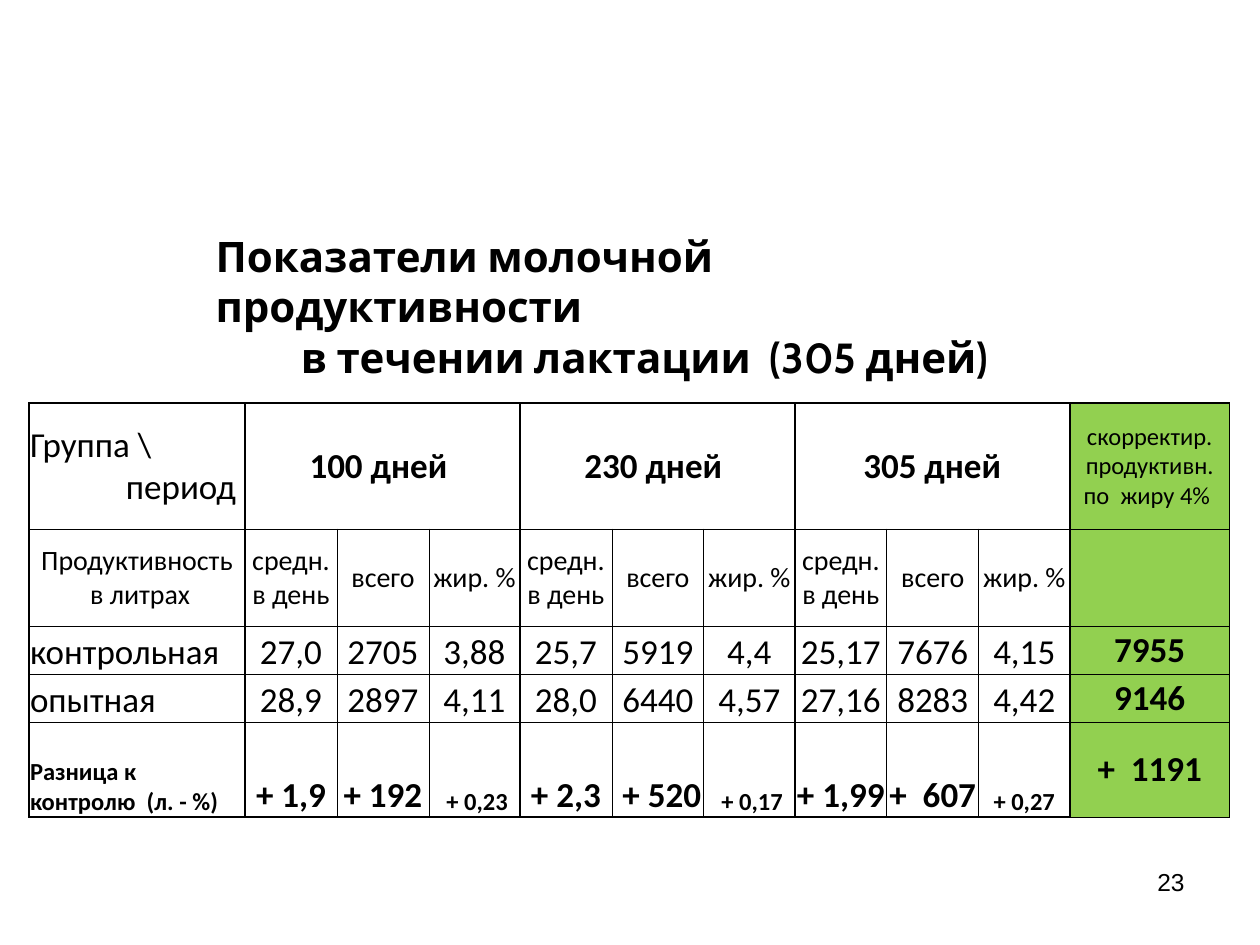
import pptx
import pptx.util
import pptx.dml.color
import pptx.enum.text
import pptx.oxml
from pptx.oxml.ns import qn

# Content
TITLE = ["Показатели молочной продуктивности", " в течении лактации  (305 дней) "]
PAGE = "23"
SPANS = ["100 дней ", "230 дней ", "305 дней"]
SUBS = ["средн. в день", "всего", "жир. %"]
ROWS = [
    ["Группа \\\nпериод ", SPANS[0], "", "", SPANS[1], "", "", SPANS[2], "", "",
     "скорректир. продуктивн. по  жиру 4% "],
    ["Продуктивность\n в литрах", *SUBS * 3, ""],
    ["контрольная", "27,0", "2705", "3,88", "25,7", "5919", "4,4",
     "25,17", "7676", "4,15", "7955"],
    ["опытная", "28,9", "2897", "4,11", "28,0", "6440", "4,57",
     "27,16", "8283", "4,42", "9146"],
    ["Разница к контролю  (л. - %)", "+ 1,9", "+ 192", " + 0,23", "+ 2,3", " + 520",
     " + 0,17", "+ 1,99", "+  607", "+ 0,27", "+  1191"],
]

# Layout in px
WIDTHS = [216] + [92, 92, 91] * 3 + [160]
HEIGHTS = [126, 97, 48, 48, 95]
STARTS = (1, 4, 7)
LAST = len(WIDTHS) - 1
END = len(ROWS) - 1
BLACK, GREEN = "000000", "92D050"

ALIGN = pptx.enum.text.PP_ALIGN
ANCHOR = pptx.enum.text.MSO_ANCHOR


def px(n):
    return pptx.util.Emu(n * 914400 // 126)


def color(code):
    return pptx.dml.color.RGBColor.from_string(code)


def write(frame, text, size=20, font="Calibri", bold=False, align=(ALIGN.CENTER,)):
    """Fill a frame, one paragraph a line; align holds one value a line or one for all."""
    frame.word_wrap = True
    for i, line in enumerate(text.split("\n")):
        para = frame.paragraphs[0] if i == 0 else frame.add_paragraph()
        para.alignment = align[min(i, len(align) - 1)]
        run = para.add_run()
        run.text = line
        run.font.size = pptx.util.Pt(size)
        run.font.name = font
        run.font.bold = bold
        run.font.color.rgb = color(color_code) if (color_code := BLACK) else None


def edges(cell, **sides):
    props = cell._tc.get_or_add_tcPr()
    for n, (side, width) in enumerate(sides.items()):
        line = pptx.oxml.parse_xml(
            f'<a:{side} xmlns:a="http://schemas.openxmlformats.org/drawingml/2006/main" '
            f'w="{pptx.util.Pt(width)}"><a:solidFill><a:srgbClr val="{BLACK}"/>'
            f'</a:solidFill></a:{side}>')
        props.insert(n, line)


def style(row, col):
    """Size, weight and alignment of a cell."""
    bold = row == END or (row == 0 and col in STARTS) or (row in (2, 3) and col == LAST)
    size = 16 if row == 1 else 20
    if (row, col) == (0, LAST) or (row == END and col in (0, 3, 6, 9)):
        size = 14
    align = (ALIGN.CENTER,)
    if col == 0 and row != 1:
        align = (ALIGN.LEFT, ALIGN.RIGHT)
    return dict(size=size, bold=bold, align=align)


deck = pptx.Presentation()
deck.slide_width, deck.slide_height = px(1260), px(945)
slide = deck.slides.add_slide(deck.slide_layouts[5])

# Title
title = slide.shapes.title
title.left, title.top, title.width, title.height = map(px, (203, 224, 883, 115))
title.text_frame.vertical_anchor = ANCHOR.TOP
title.text_frame.auto_size = pptx.enum.text.MSO_AUTO_SIZE.SHAPE_TO_FIT_TEXT
write(title.text_frame, "\n".join(TITLE), size=24, font="Cabin", bold=True,
      align=(ALIGN.LEFT, ALIGN.CENTER))

# Page number
box = slide.shapes.add_textbox(*map(px, (903, 861, 294, 65)))
write(box.text_frame, PAGE, size=14, font="Arial", align=(ALIGN.RIGHT,))

# Table
table = slide.shapes.add_table(len(ROWS), len(WIDTHS), px(29), px(403),
                               px(sum(WIDTHS)), px(sum(HEIGHTS))).table
table.first_row = table.horz_banding = False
for part, width in zip(table.columns, WIDTHS):
    part.width = px(width)
for part, height in zip(table.rows, HEIGHTS):
    part.height = px(height)
for col in STARTS:
    table.cell(0, col).merge(table.cell(0, col + 2))

for r, row in enumerate(ROWS):
    for c, text in enumerate(row):
        cell = table.cell(r, c)
        cell.margin_left = cell.margin_right = cell.margin_top = px(1)
        cell.margin_bottom = 0
        low = r > 1 and c < LAST
        cell.vertical_anchor = ANCHOR.BOTTOM if low else ANCHOR.MIDDLE
        if c == LAST:
            cell.fill.solid()
            cell.fill.fore_color.rgb = color(GREEN)
        else:
            cell.fill.background()
        # Thick lines frame the groups, thin lines split them
        edges(cell,
              lnL=1 if r == 0 or c in (0, *STARTS, LAST) else 0.5,
              lnR=1 if r == 0 or c % 3 == 0 or c == LAST else 0.5,
              lnT=1 if r == 0 else 0.5,
              lnB=1 if r == END and c < LAST else 0.5)
        if text:
            write(cell.text_frame, text, **style(r, c))

deck.save("out.pptx")
